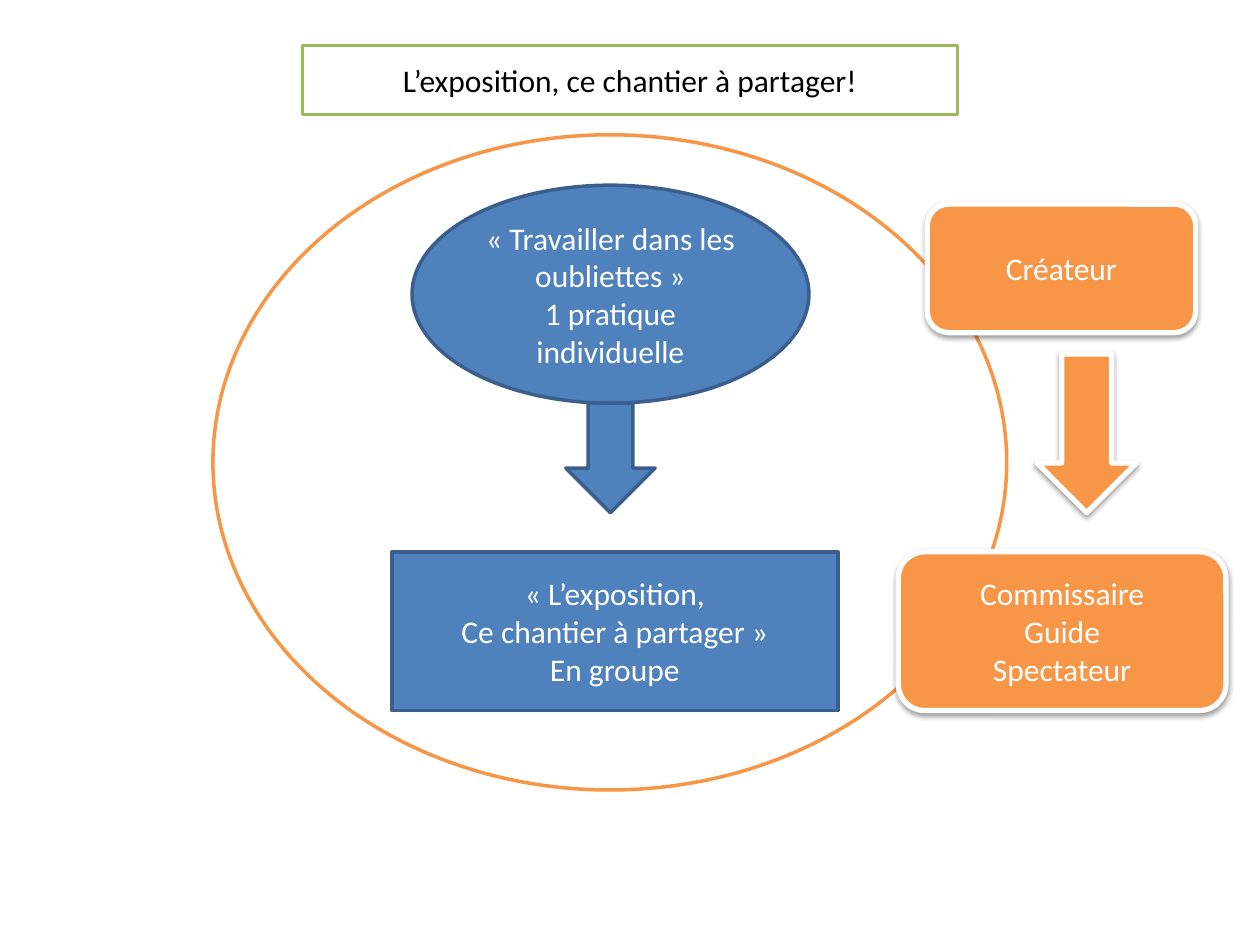
"""Build the slide on the exhibition as a worksite to share."""
import lxml.etree
import pptx
import pptx.dml.color
import pptx.enum.shapes
import pptx.enum.text
import pptx.oxml.ns
import pptx.util

Inches = pptx.util.Inches
SHAPE = pptx.enum.shapes.MSO_SHAPE
WHITE, BLACK = "FFFFFF", "000000"
BLUE, DARK_BLUE = "4F81BD", "3A5F8C"
ORANGE, GREEN = "F79646", "9BBB59"


def color(hex_string):
    return pptx.dml.color.RGBColor.from_string(hex_string)


class Board:
    font_name = "Calibri"
    font_size = pptx.util.Pt(18)

    def __init__(self, slide):
        self.slide = slide

    def paint(self, shape, fill, line, width):
        shape.fill.solid()
        shape.fill.fore_color.rgb = color(fill)
        shape.line.color.rgb = color(line)
        shape.line.width = pptx.util.Pt(width)

    def label(self, shape, lines, text_color):
        frame = shape.text_frame
        frame.word_wrap = True
        frame.vertical_anchor = pptx.enum.text.MSO_ANCHOR.MIDDLE
        frame.text = "\n".join(lines)
        for paragraph in frame.paragraphs:
            paragraph.alignment = pptx.enum.text.PP_ALIGN.CENTER
            paragraph.font.name = self.font_name
            paragraph.font.size = self.font_size
            paragraph.font.color.rgb = color(text_color)

    def title(self, text, left, top, width, height):
        title = self.slide.shapes.title
        title.left, title.top = Inches(left), Inches(top)
        title.width, title.height = Inches(width), Inches(height)
        self.paint(title, WHITE, GREEN, 2)
        self.label(title, [text], BLACK)

    def shape(self, kind, box, fill, line, width=2, lines=()):
        shape = self.slide.shapes.add_shape(kind, *map(Inches, box))
        self.paint(shape, fill, line, width)
        shape.shadow.inherit = False
        if lines:
            self.label(shape, lines, WHITE)
        return shape

    def practice(self, kind, box, lines=()):
        self.shape(kind, box, BLUE, DARK_BLUE, lines=lines)

    def role(self, kind, box, lines=()):
        shape = self.shape(kind, box, ORANGE, WHITE, 3, lines)
        qn = pptx.oxml.ns.qn
        effects = shape.element.spPr.find(qn("a:effectLst"))
        shadow = lxml.etree.SubElement(
            effects, qn("a:outerShdw"), blurRad="40000", dist="20000",
            dir="5400000", rotWithShape="0")
        black = lxml.etree.SubElement(shadow, qn("a:srgbClr"), val=BLACK)
        lxml.etree.SubElement(black, qn("a:alpha"), val="38000")


def main():
    deck = pptx.Presentation()
    deck.slide_width, deck.slide_height = Inches(10), Inches(7.5)
    board = Board(deck.slides.add_slide(deck.slide_layouts[5]))

    board.title("L’exposition, ce chantier à partager!", 2.4, 0.36, 5.2, 0.55)
    board.shape(SHAPE.OVAL, (1.69, 1.07, 6.3, 5.2), WHITE, ORANGE)

    board.practice(SHAPE.OVAL, (3.27, 1.47, 3.15, 1.73),
                   ["« Travailler dans les oubliettes »",
                    "1 pratique individuelle"])
    board.practice(SHAPE.DOWN_ARROW, (4.49, 3.2, 0.71, 0.87))
    board.practice(SHAPE.RECTANGLE, (3.11, 4.38, 3.54, 1.26),
                   ["« L’exposition,", "Ce chantier à partager »", "En groupe"])

    board.role(SHAPE.ROUNDED_RECTANGLE, (7.36, 1.62, 2.13, 1.02), ["Créateur"])
    board.role(SHAPE.DOWN_ARROW, (8.23, 2.81, 0.79, 1.26))
    board.role(SHAPE.ROUNDED_RECTANGLE, (7.13, 4.38, 2.6, 1.26),
               ["Commissaire", "Guide", "Spectateur"])

    deck.save("out.pptx")


if __name__ == "__main__":
    main()
